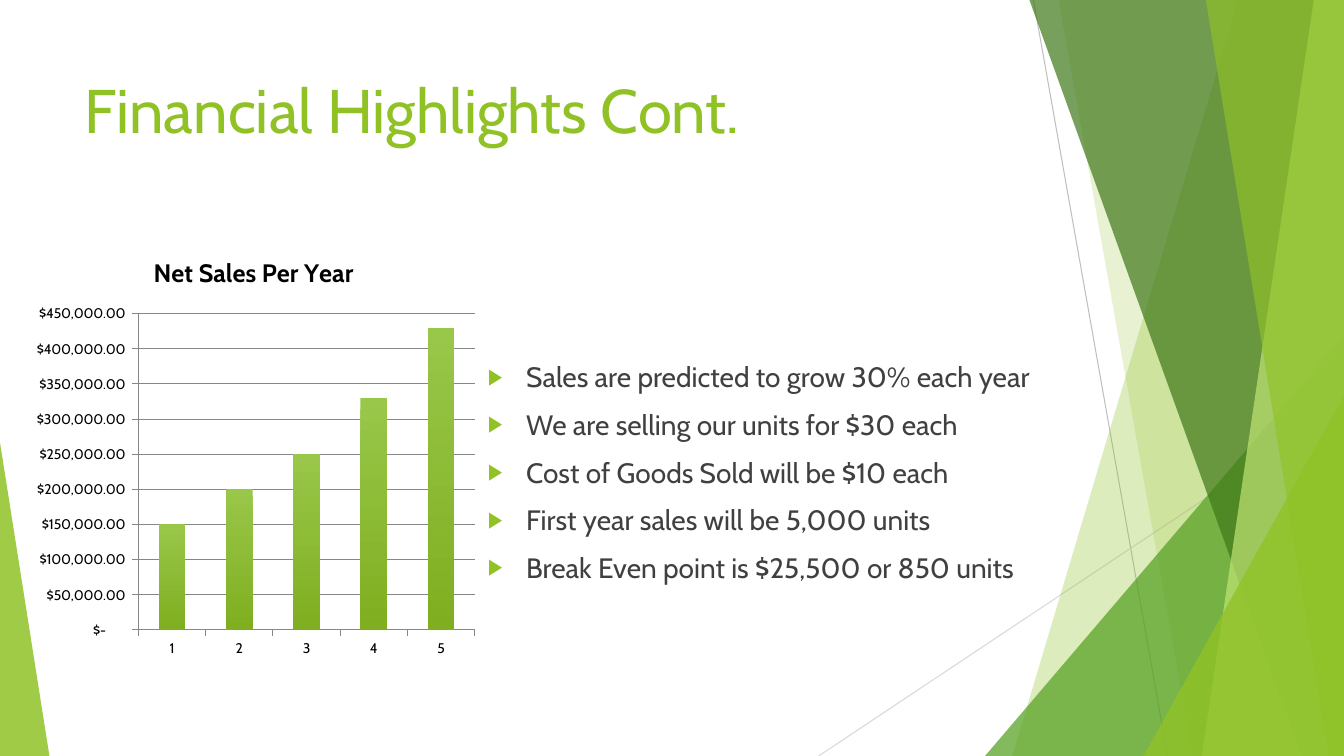
from lxml import etree
from pptx import Presentation
from pptx.chart.data import CategoryChartData
from pptx.dml.color import RGBColor
from pptx.enum.chart import XL_CHART_TYPE, XL_TICK_MARK
from pptx.enum.shapes import MSO_CONNECTOR, MSO_SHAPE
from pptx.enum.text import MSO_ANCHOR, PP_ALIGN
from pptx.oxml.ns import qn
from pptx.util import Inches, Pt

COLUMN = XL_CHART_TYPE.COLUMN_CLUSTERED
TICK_OUT = XL_TICK_MARK.OUTSIDE
STRAIGHT = MSO_CONNECTOR.STRAIGHT
TRIANGLE = MSO_SHAPE.ISOSCELES_TRIANGLE
TOP = MSO_ANCHOR.TOP
LEFT = PP_ALIGN.LEFT

FONT = "Cabin"
GREEN = "90C226"
WIDTH, HEIGHT = 13.33, 7.5
CURRENCY = '_("$"* #,##0.00_);_("$"* \\(#,##0.00\\);_("$"* "-"??_);_(@_)'
POINTS = [
    "Sales are predicted to grow 30% each year",
    "We are selling our units for $30 each",
    "Cost of Goods Sold will be $10 each",
    "First year sales will be 5,000 units",
    "Break Even point is $25,500 or 850 units",
]
SALES = [150000, 200000, 250000, 330000, 430000]


def color(value):
    return RGBColor.from_string(value)


def inches(box):
    return [Inches(length) for length in box]


def style_font(font, size, value, bold=False):
    font.name = FONT
    font.size = Pt(size)
    font.bold = bold
    font.color.rgb = color(value)


def paint(shape, value, opacity):
    shape.shadow.inherit = False
    shape.fill.solid()
    shape.fill.fore_color.rgb = color(value)
    shape.line.fill.background()
    srgb = shape.fill._xPr.find(".//" + qn("a:srgbClr"))
    etree.SubElement(srgb, qn("a:alpha"), val=str(opacity * 1000))


def add_line(page, start, end, value):
    line = page.shapes.add_connector(STRAIGHT, *inches(start + end))
    line.line.color.rgb = color(value)
    line.line.width = Pt(0.75)
    etree.SubElement(line._element.spPr, qn("a:effectLst"))


def add_band(page, box, top_x, bottom_x, value, opacity):
    left, top, width, height = box
    right, bottom = left + width, top + height
    builder = page.shapes.build_freeform(Inches(left + top_x), Inches(top))
    builder.add_line_segments([
        inches(point)
        for point in [(right, top), (right, bottom), (left + bottom_x, bottom)]
    ])
    paint(builder.convert_to_shape(), value, opacity)


def add_corner(page, box, apex, value, opacity):
    corner = page.shapes.add_shape(TRIANGLE, *inches(box))
    corner.adjustments[0] = apex
    paint(corner, value, opacity)


def add_facets(page, box):
    left, top, width, height = box
    right, bottom = left + width, top + height

    def right_corner(corner_width, corner_height, value, opacity):
        place = (right - corner_width, bottom - corner_height,
                 corner_width, corner_height)
        add_corner(page, place, 1, value, opacity)

    add_line(page, (left + 2.13, top), (left + 3.46, bottom), "BFBFBF")
    add_line(page, (right, top + 4.03), (left, bottom), "D9D9D9")
    add_band(page, box, 4.16, 1.92, GREEN, 30)
    add_band(page, box, 2.38, 3.71, GREEN, 20)
    right_corner(3.56, 4.17, "54A021", 72)
    for top_x, bottom_x, value, opacity in [
        (2.09, 4.79, "3F7819", 70),
        (4.91, 3.8, "C0E474", 70),
        (3.84, 5.06, GREEN, 65),
    ]:
        add_band(page, box, top_x, bottom_x, value, opacity)
    right_corner(1.99, 3.57, GREEN, 80)


def add_title(page, box, text):
    title = page.shapes.title
    title.left, title.top, title.width, title.height = inches(box)
    frame = title.text_frame
    frame.text = text
    frame.vertical_anchor = TOP
    para = frame.paragraphs[0]
    para.alignment = LEFT
    style_font(para.font, 44, GREEN)


def add_bullets(page, box, texts):
    frame = page.shapes.add_textbox(*inches(box)).text_frame
    frame.word_wrap = True
    for index, text in enumerate(texts):
        para = frame.paragraphs[0] if index == 0 else frame.add_paragraph()
        para.text = text
        para.space_before = Pt(10)
        style_font(para.font, 20, "404040")
        properties = para._p.get_or_add_pPr()
        properties.set("marL", str(Inches(0.38)))
        properties.set("indent", str(-Inches(0.38)))
        default = properties.find(qn("a:defRPr"))
        bullet_color = etree.Element(qn("a:buClr"))
        etree.SubElement(bullet_color, qn("a:srgbClr"), val=GREEN)
        for part in [
            bullet_color,
            etree.Element(qn("a:buSzPct"), val="80000"),
            etree.Element(qn("a:buFont"), typeface="Arial"),
            etree.Element(qn("a:buChar"), char="▶"),
        ]:
            default.addprevious(part)


def set_plot_area(chart, x, y, w, h):
    area = chart._chartSpace.chart.plotArea
    for old in area.findall(qn("c:layout")):
        area.remove(old)
    layout = etree.Element(qn("c:layout"))
    area.insert(0, layout)
    manual = etree.SubElement(layout, qn("c:manualLayout"))
    for name, value in [
        ("layoutTarget", "inner"), ("xMode", "edge"), ("yMode", "edge"),
        ("x", x), ("y", y), ("w", w), ("h", h),
    ]:
        etree.SubElement(manual, qn("c:" + name), val=str(value))


def add_sales_chart(page, box, name, values):
    data = CategoryChartData()
    data.categories = [str(year + 1) for year in range(len(values))]
    data.add_series(name, values)
    chart = page.shapes.add_chart(COLUMN, *inches(box), data).chart
    style_font(chart.font, 10, "000000")
    chart.has_legend = False
    chart.has_title = True
    frame = chart.chart_title.text_frame
    frame.text = name
    style_font(frame.paragraphs[0].font, 18, "000000", bold=True)
    set_plot_area(chart, 0.25, 0.18, 0.73, 0.74)

    value_axis = chart.value_axis
    value_axis.minimum_scale = 0
    value_axis.maximum_scale = 450000
    value_axis.major_unit = 50000
    value_axis.tick_labels.number_format = CURRENCY
    value_axis.tick_labels.number_format_is_linked = False
    value_axis.has_major_gridlines = True
    for axis in (value_axis, chart.category_axis):
        axis.major_tick_mark = TICK_OUT
    for part in (value_axis, value_axis.major_gridlines, chart.category_axis):
        part.format.line.color.rgb = color("878787")
        part.format.line.width = Pt(0.75)

    plot = chart.plots[0]
    plot.gap_width = 150
    plot.vary_by_categories = False
    fill = plot.series[0].format.fill
    fill.gradient()
    fill.gradient_angle = 270
    for stop, value in zip(fill.gradient_stops, ["98C74A", "80AE20"]):
        stop.color.rgb = color(value)


def main():
    deck = Presentation()
    deck.slide_width, deck.slide_height = inches((WIDTH, HEIGHT))
    page = deck.slides.add_slide(deck.slide_layouts[5])
    add_facets(page, (8.12, 0, WIDTH - 8.12, HEIGHT))
    add_corner(page, (0, 4.39, 0.49, 3.11), 0, GREEN, 85)
    add_title(page, (0.74, 0.66, 9.4, 1.44), "Financial Highlights Cont.")
    add_bullets(page, (4.74, 3.52, 6.28, 2.81), POINTS)
    add_sales_chart(page, (0.23, 2.35, 4.57, 4.24), "Net Sales Per Year", SALES)
    deck.save("out.pptx")


if __name__ == "__main__":
    main()
